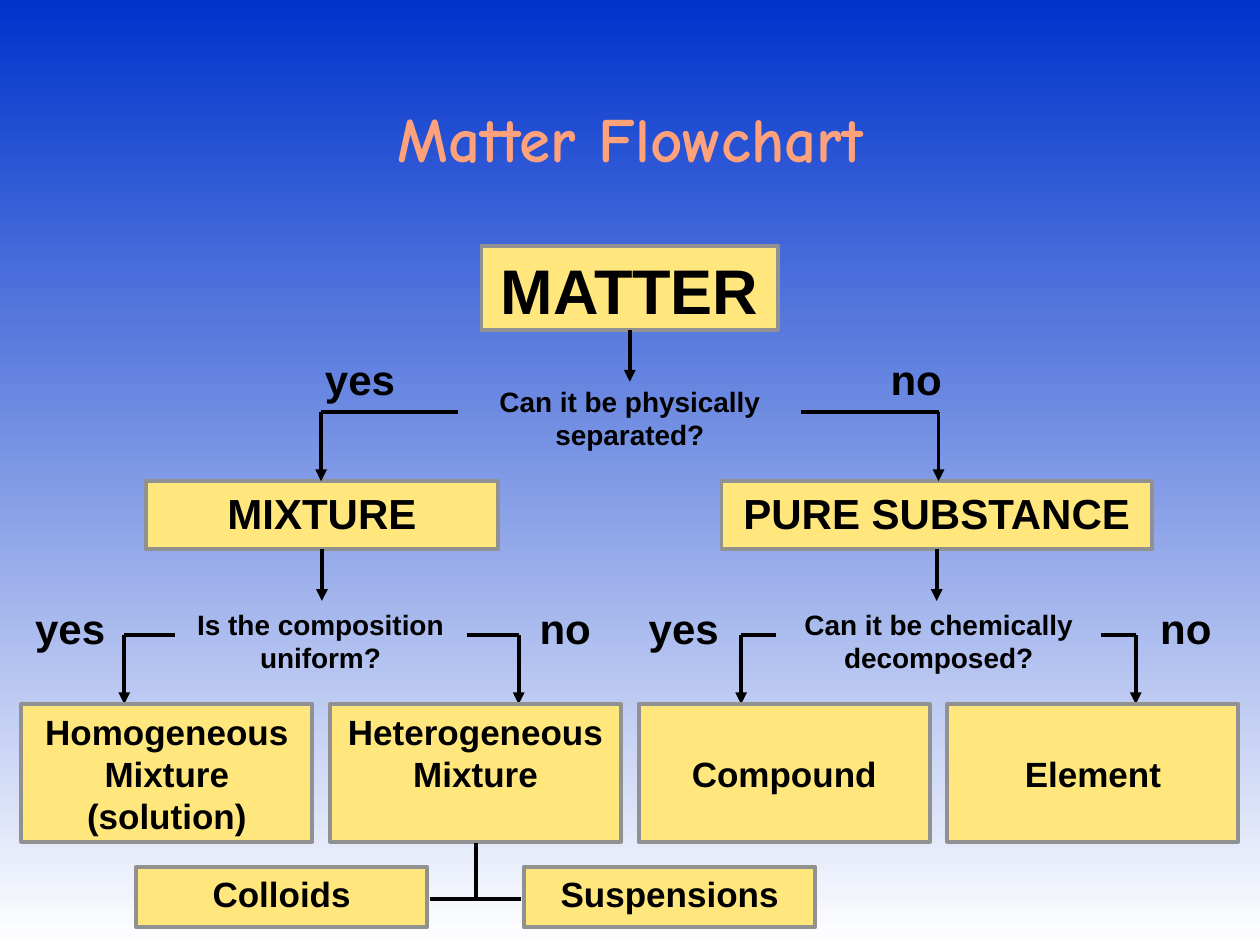
from pptx import Presentation
from pptx.dml.color import RGBColor
from pptx.enum.shapes import MSO_CONNECTOR, MSO_SHAPE
from pptx.enum.text import MSO_ANCHOR, PP_ALIGN
from pptx.oxml.ns import qn
from pptx.util import Pt
from lxml.etree import SubElement

BLUE = RGBColor(0x00, 0x33, 0xCC)
WHITE = RGBColor(0xFF, 0xFF, 0xFF)
YELLOW = RGBColor(0xFF, 0xE6, 0x7D)
GRAY = RGBColor(0x91, 0x91, 0x91)
BLACK = RGBColor(0x00, 0x00, 0x00)
CORAL = RGBColor(0xFF, 0xA2, 0x7C)

deck = Presentation()
deck.slide_width, deck.slide_height = Pt(720), Pt(540)
page = deck.slides.add_slide(deck.slide_layouts[6])


def add_text(text, left, top, width, height, size, boxed=False, color=BLACK,
             font="Arial", align=PP_ALIGN.CENTER, anchor=MSO_ANCHOR.TOP,
             before=0, spacing=1.0):
    """Add a plain or boxed label; each line of text is a paragraph."""
    place = [Pt(value) for value in (left, top, width, height)]
    if boxed:
        box = page.shapes.add_shape(MSO_SHAPE.RECTANGLE, *place)
        box.shadow.inherit = False
        box.fill.solid()
        box.fill.fore_color.rgb = YELLOW
        box.line.color.rgb = GRAY
        box.line.width = Pt(2.25)
    else:
        box = page.shapes.add_textbox(*place)
    frame = box.text_frame
    frame.word_wrap = True
    frame.vertical_anchor = anchor
    for index, words in enumerate(text.split("\n")):
        para = frame.add_paragraph() if index else frame.paragraphs[0]
        para_format = {"alignment": align, "line_spacing": spacing,
                       "space_before": Pt(0 if index else before)}
        for name, value in para_format.items():
            setattr(para, name, value)
        span = para.add_run()
        span.text = words
        for name, value in {"name": font, "size": Pt(size), "bold": True}.items():
            setattr(span.font, name, value)
        span.font.color.rgb = color


def add_line(x1, y1, x2, y2, arrow=False):
    line = page.shapes.add_connector(
        MSO_CONNECTOR.STRAIGHT, Pt(x1), Pt(y1), Pt(x2), Pt(y2))
    line.line.color.rgb = BLACK
    line.line.width = Pt(2.25)
    if arrow:
        SubElement(line.line._get_or_add_ln(), qn("a:tailEnd"), type="triangle")
    SubElement(line._element.spPr, qn("a:effectLst"))


# Background gradient, top to bottom
fill = page.background.fill
fill.gradient()
fill.gradient_angle = 270
for stop, color, position in zip(fill.gradient_stops, (BLUE, WHITE), (0, 1)):
    stop.color.rgb = color
    stop.position = position

# Title
add_text("Matter Flowchart", 78, 36, 564, 90, 36, color=CORAL,
         font="Comic Neue", anchor=MSO_ANCHOR.MIDDLE, spacing=0.9)

# Upper boxes, each with an arrow down to its question
for text, left, top, width, height, size in [
    ("MATTER", 275.2, 140.4, 169.4, 48.2, 36),
    ("MIXTURE", 83.5, 275, 200.9, 38.9, 24),
    ("PURE SUBSTANCE", 412.3, 275, 245.9, 38.9, 24),
]:
    add_text(text, left, top, width, height, size, boxed=True, before=2)
    middle, bottom = left + width / 2, top + height
    add_line(middle, bottom, middle, bottom + 29.5, arrow=True)

# Questions: text, left, top, width, then branch height and line ends
# (outer and inner x on the yes side, inner and outer x on the no side)
for text, left, top, width, y, yes_x, yes_end, no_end, no_x in [
    ("Can it be physically separated?", 262, 216, 195.8, 235.5, 183.5, 262, 458, 536.3),
    ("Is the composition uniform?", 100, 343.4, 166.3, 362.9, 71, 100.2, 267, 296.4),
    ("Can it be chemically decomposed?", 438.5, 343.4, 195.8, 362.9, 423.5, 443.3, 629.3, 649),
]:
    add_text(text, left, top, width, 49, 16)
    for outer, inner in [(yes_x, yes_end), (no_x, no_end)]:
        add_line(outer, y, inner, y)
        add_line(outer, y, outer, y + 39.5, arrow=True)

# Answers
for text, left, top in [
    ("yes", 178.6, 198.7), ("no", 501.8, 198.7),
    ("yes", 13, 340.6), ("no", 301.2, 340.6),
    ("yes", 363.6, 340.6), ("no", 655.9, 340.6),
]:
    add_text(text, left, top, 60, 29.5, 24, align=PP_ALIGN.LEFT)

# Row of final classes
for column, (text, anchor) in enumerate([
    ("Homogeneous Mixture\n(solution)", MSO_ANCHOR.TOP),
    ("Heterogeneous Mixture", MSO_ANCHOR.TOP),
    ("Compound", MSO_ANCHOR.MIDDLE),
    ("Element", MSO_ANCHOR.MIDDLE),
]):
    add_text(text, 12.2 + 176.4 * column, 402.5, 166.3, 78.5, 20,
             boxed=True, anchor=anchor, before=2)

# Kinds of heterogeneous mixture
add_line(245.5, 513.5, 298, 513.5)
add_line(272, 513.5, 272, 482)
for text, left in [("Colloids", 77.8), ("Suspensions", 299.5)]:
    add_text(text, left, 495.2, 166.3, 34.6, 20, boxed=True)

deck.save("out.pptx")
